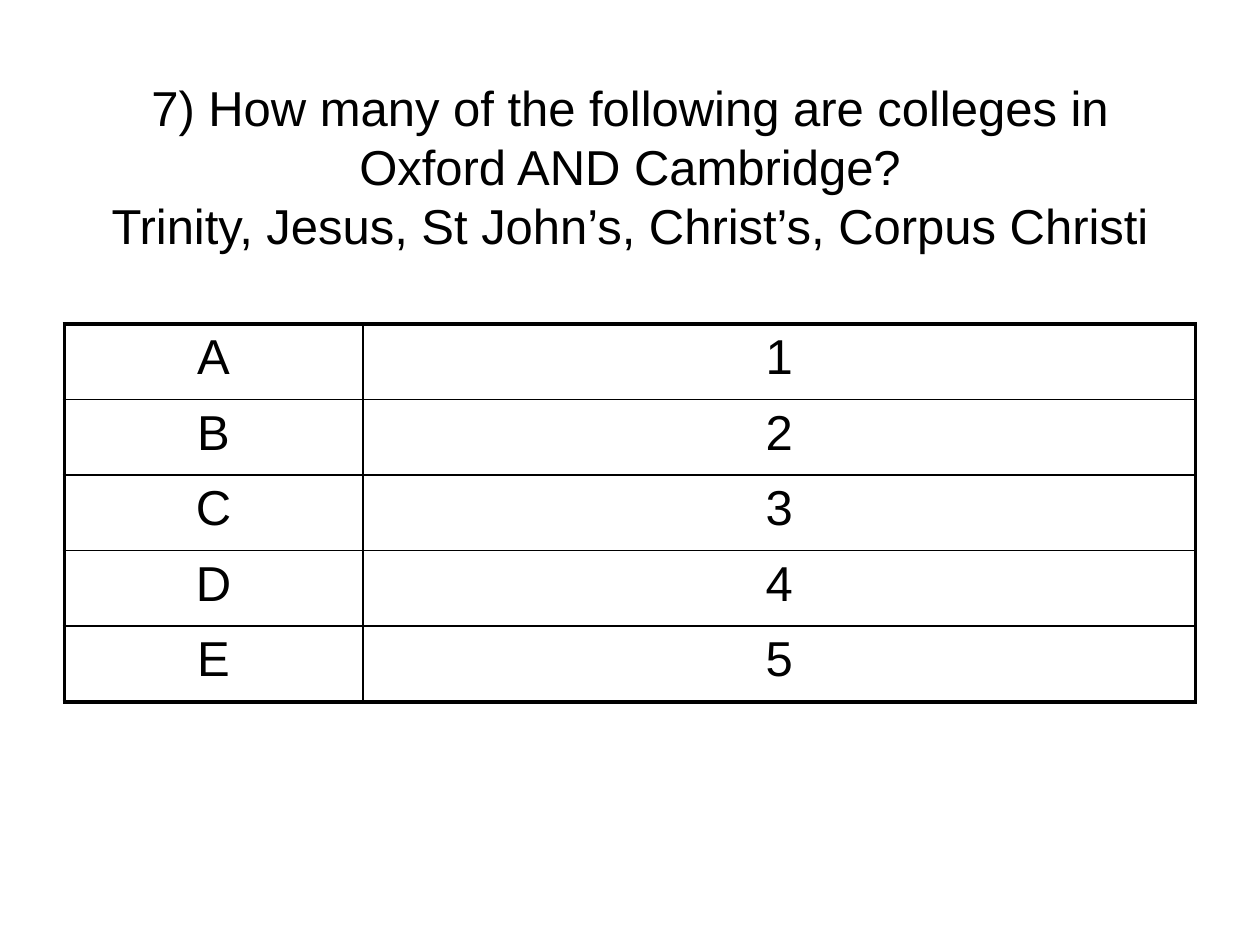
import pptx
import pptx.dml.color
import pptx.enum.text
import pptx.oxml.ns
import pptx.util
from lxml import etree
from pptx.util import Inches

BLACK = pptx.dml.color.RGBColor(0, 0, 0)
QUESTION = (
    "7) How many of the following are colleges in Oxford AND Cambridge?\v"
    "Trinity, Jesus, St John’s, Christ’s, Corpus Christi"
)
ANSWERS = [("A", "1"), ("B", "2"), ("C", "3"), ("D", "4"), ("E", "5")]
COLUMN_WIDTHS = (2.37, 6.61)
ROW_HEIGHT = 0.6
OUTER_BORDER = 2.25
INNER_BORDER = 1


def write_text(text_frame, text):
    """Fill a text frame with centred black 28 pt Arial."""
    text_frame.text = text
    for paragraph in text_frame.paragraphs:
        paragraph.alignment = pptx.enum.text.PP_ALIGN.CENTER
        for run in paragraph.runs:
            run.font.name = "Arial"
            run.font.size = pptx.util.Pt(28)
            run.font.color.rgb = BLACK


def set_borders(cell, widths):
    """Draw the left, right, top and bottom borders at the given point widths."""
    qn = pptx.oxml.ns.qn
    properties = cell._tc.get_or_add_tcPr()
    for position, (side, width) in enumerate(zip("LRTB", widths)):
        border = etree.Element(qn(f"a:ln{side}"), w=str(pptx.util.Pt(width)))
        fill = etree.SubElement(border, qn("a:solidFill"))
        etree.SubElement(fill, qn("a:srgbClr"), val=str(BLACK))
        properties.insert(position, border)


def add_question(slide):
    """Add the question above the answers."""
    question = slide.shapes.add_textbox(Inches(0.5), Inches(0.3), Inches(9), Inches(2.03))
    question.text_frame.word_wrap = True
    question.text_frame.vertical_anchor = pptx.enum.text.MSO_ANCHOR.MIDDLE
    write_text(question.text_frame, QUESTION)


def add_answers(slide):
    """Add the answer table with a heavier outer frame."""
    last_row, last_column = len(ANSWERS) - 1, len(COLUMN_WIDTHS) - 1
    answers = slide.shapes.add_table(
        len(ANSWERS), len(COLUMN_WIDTHS), Inches(0.51), Inches(2.57),
        Inches(sum(COLUMN_WIDTHS)), Inches(ROW_HEIGHT * len(ANSWERS)),
    ).table
    answers.first_row = False
    answers.horz_banding = False
    for column, width in zip(answers.columns, COLUMN_WIDTHS):
        column.width = Inches(width)
    for row, texts in enumerate(ANSWERS):
        answers.rows[row].height = Inches(ROW_HEIGHT)
        for column, text in enumerate(texts):
            cell = answers.cell(row, column)
            write_text(cell.text_frame, text)
            cell.fill.background()
            on_edge = (column == 0, column == last_column, row == 0, row == last_row)
            set_borders(cell, [OUTER_BORDER if edge else INNER_BORDER for edge in on_edge])


def main():
    """Build the quiz slide and save it."""
    quiz = pptx.Presentation()
    quiz.slide_width, quiz.slide_height = Inches(10), Inches(7.5)
    slide = quiz.slides.add_slide(quiz.slide_layouts[6])
    add_question(slide)
    add_answers(slide)
    quiz.save("out.pptx")


if __name__ == "__main__":
    main()
